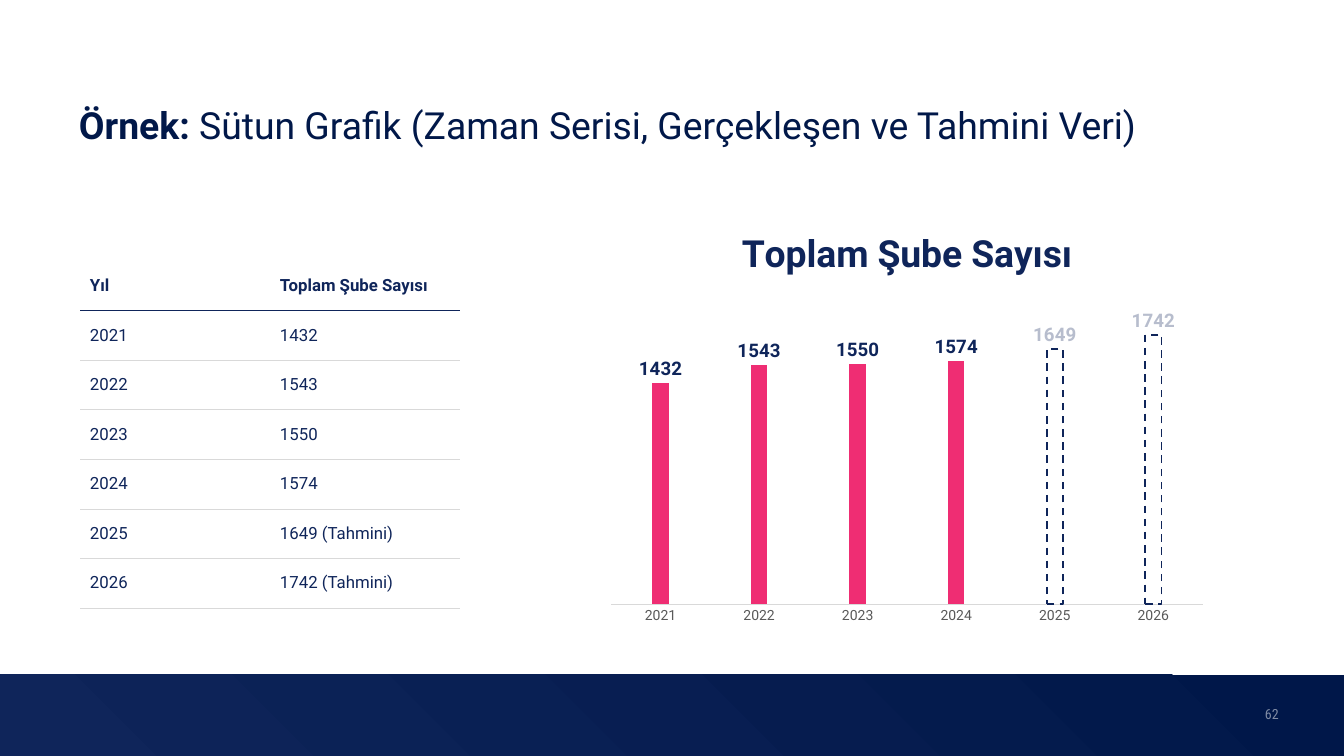
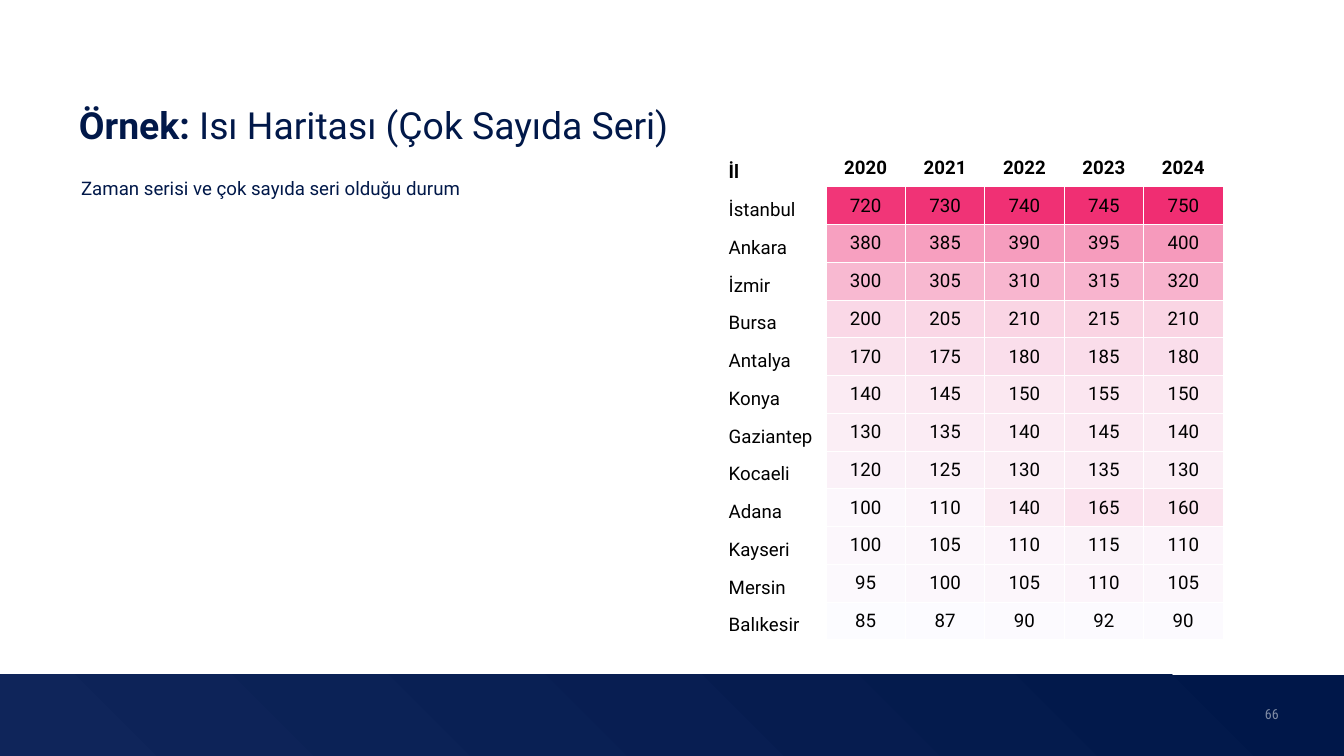
from dataclasses import dataclass

from lxml import etree
from pptx import Presentation
from pptx import util as u
from pptx.chart import data as chart_data
from pptx.dml.color import RGBColor
from pptx.enum import chart as charts, dml, shapes, text
from pptx.oxml import ns

PX = 914400 / 67.2
NO_STYLE = "{2D5ABB26-0587-4C30-8999-92F81FD0307C}"


@dataclass(frozen=True)
class Theme:
    font: str = "Roboto"
    narrow: str = "Roboto Condensed"
    title: str = "011849"
    navy: str = "0F255A"
    deep: str = "001749"
    pink: str = "EF2D73"
    rule: str = "D9D9D9"
    axis: str = "595959"
    forecast: str = "B7BDCD"
    black: str = "000000"
    white: str = "FFFFFF"
    heat_low: str = "FCFCFF"
    heat_high: str = "F02D72"
    title_size: int = 40
    body_size: int = 20
    table_size: int = 18
    small_size: int = 15


THEME = Theme()

BRANCHES = {2021: 1432, 2022: 1543, 2023: 1550, 2024: 1574, 2025: 1649, 2026: 1742}
FIRST_FORECAST = 2025
BRANCH_TITLE = "Toplam Şube Sayısı"

HEAT_YEARS = ["2020", "2021", "2022", "2023", "2024"]
CITIES = {
    "İstanbul": [720, 730, 740, 745, 750],
    "Ankara": [380, 385, 390, 395, 400],
    "İzmir": [300, 305, 310, 315, 320],
    "Bursa": [200, 205, 210, 215, 210],
    "Antalya": [170, 175, 180, 185, 180],
    "Konya": [140, 145, 150, 155, 150],
    "Gaziantep": [130, 135, 140, 145, 140],
    "Kocaeli": [120, 125, 130, 135, 130],
    "Adana": [100, 110, 140, 165, 160],
    "Kayseri": [100, 105, 110, 115, 110],
    "Mersin": [95, 100, 105, 110, 105],
    "Balıkesir": [85, 87, 90, 92, 90],
}


def px(value):
    return u.Emu(round(value * PX))


def box(*lengths):
    return [px(length) for length in lengths]


def color(value):
    return RGBColor.from_string(value)


def style_font(font, size, value, bold=False, name=THEME.font):
    font.name = name
    font.size = u.Pt(size)
    font.bold = bold
    font.color.rgb = color(value)


def add_xml(parent, tag, **attributes):
    return etree.SubElement(parent, ns.qn(tag), attributes)


# Text and the parts every slide shares
def add_text(slide, place, *parts):
    """Add a one-line box and return its paragraph."""
    frame = slide.shapes.add_textbox(*box(*place)).text_frame
    frame.word_wrap = True
    frame.vertical_anchor = text.MSO_ANCHOR.MIDDLE
    frame.margin_left = frame.margin_right = frame.margin_top = frame.margin_bottom = 0
    paragraph = frame.paragraphs[0]
    for part in parts:
        paragraph.add_run().text = part
    return paragraph


def add_footer_band(slide):
    band = slide.shapes.add_shape(shapes.MSO_SHAPE.RECTANGLE, *box(0, 675, 1344, 81))
    band.shadow.inherit = False
    band.line.fill.background()
    band.fill.gradient()
    for stop, position, value in zip(band.fill.gradient_stops, (0, 0.99), (THEME.navy, THEME.deep)):
        stop.position = position
        stop.color.rgb = color(value)
    # Circular gradient that starts in the lower left corner
    gradient = band.element.spPr.find(ns.qn("a:gradFill"))
    gradient.remove(gradient.find(ns.qn("a:lin")))
    circle = add_xml(gradient, "a:path", path="circle")
    add_xml(circle, "a:fillToRect", t="100000", r="100000")


def add_page_number(slide, number):
    paragraph = add_text(slide, (1265, 700, 63, 27), str(number))
    run = paragraph.runs[0]
    style_font(run.font, THEME.small_size, THEME.white, name=THEME.narrow)
    add_xml(next(run.font._element.iter(ns.qn("a:srgbClr"))), "a:alpha", val="50000")


def add_example_slide(presentation, topic, number):
    slide = presentation.slides.add_slide(presentation.slide_layouts[6])
    add_footer_band(slide)
    add_page_number(slide, number)
    paragraph = add_text(slide, (79, 83, 1187, 84), "Örnek: ", topic)
    for run, bold in zip(paragraph.runs, (True, False)):
        style_font(run.font, THEME.title_size, THEME.title, bold)
    return slide


# Tables
def add_plain_table(slide, place, rows):
    table = slide.shapes.add_table(len(rows), len(rows[0]), *box(*place)).table
    table.first_row = table.horz_banding = False
    table._tbl.tblPr.find(ns.qn("a:tableStyleId")).text = NO_STYLE
    height = px(place[3] / len(rows))
    for row in table.rows:
        row.height = height
    return table


def set_borders(cell, **borders):
    """Draw borders given as side=(colour, points), in the order L, R, T, B."""
    for side, (value, width) in borders.items():
        line = add_xml(cell._tc.get_or_add_tcPr(), f"a:ln{side}", w=str(u.Pt(width)))
        add_xml(add_xml(line, "a:solidFill"), "a:srgbClr", val=value)


def fill_cell(cell, value, size, font_color, bold, fill=None):
    cell.text = str(value)
    cell.vertical_anchor = text.MSO_ANCHOR.MIDDLE
    style_font(cell.text_frame.paragraphs[0].font, size, font_color, bold)
    if fill:
        cell.fill.solid()
        cell.fill.fore_color.rgb = color(fill)
    else:
        cell.fill.background()


def add_branch_table(slide):
    rows = [("Yıl", BRANCH_TITLE)]
    for year, count in BRANCHES.items():
        rows.append((year, f"{count} (Tahmini)" if year >= FIRST_FORECAST else count))
    table = add_plain_table(slide, (80, 261, 380, 347), rows)
    header_rule, row_rule = (THEME.navy, 2.25), (THEME.rule, 0.5)
    for i, row in enumerate(rows):
        for j, value in enumerate(row):
            cell = table.cell(i, j)
            if i == 0:
                set_borders(cell, B=header_rule)
            else:
                set_borders(cell, T=header_rule if i == 1 else row_rule, B=row_rule)
            fill_cell(cell, value, THEME.table_size, THEME.navy, bold=i == 0)
            cell.margin_left = cell.margin_right = cell.margin_top = cell.margin_bottom = px(10)


def heat_color(value, low, high):
    share = (value - low) / (high - low)
    pairs = zip(color(THEME.heat_low), color(THEME.heat_high))
    return str(RGBColor(*(round(start + (end - start) * share) for start, end in pairs)))


def add_heat_map(slide):
    rows = [["İl", *HEAT_YEARS]] + [[city, *counts] for city, counts in CITIES.items()]
    table = add_plain_table(slide, (722, 149, 501, 491), rows)
    for j, column in enumerate(table.columns):
        column.width = px(104 if j == 0 else 397 / len(HEAT_YEARS))
    counts = [count for city_counts in CITIES.values() for count in city_counts]
    low, high = min(counts), max(counts)
    for i, row in enumerate(rows):
        for j, value in enumerate(row):
            cell = table.cell(i, j)
            set_borders(cell, **dict.fromkeys("LRTB", (THEME.white, 1)))
            fill = heat_color(value, low, high) if i and j else None
            fill_cell(cell, value, THEME.body_size, THEME.black, i == 0, fill)
            if j:
                cell.text_frame.paragraphs[0].alignment = text.PP_ALIGN.CENTER
            else:
                cell.vertical_anchor = text.MSO_ANCHOR.BOTTOM


# Column chart
def place_plot(chart, **fractions):
    plot_area = chart._chartSpace.chart.plotArea
    for old in plot_area.findall(ns.qn("c:layout")):
        plot_area.remove(old)
    layout = etree.Element(ns.qn("c:layout"))
    plot_area.insert(0, layout)
    manual = add_xml(layout, "c:manualLayout")
    add_xml(manual, "c:layoutTarget", val="inner")
    for mode in ("xMode", "yMode"):
        add_xml(manual, f"c:{mode}", val="edge")
    for name, fraction in fractions.items():
        add_xml(manual, f"c:{name}", val=str(fraction))


def mark_forecast(point):
    point.format.fill.solid()
    point.format.fill.fore_color.rgb = color(THEME.white)
    line = point.format.line
    line.color.rgb = color(THEME.navy)
    line.width = u.Pt(2)
    line.dash_style = dml.MSO_LINE.DASH
    style_font(point.data_label.font, THEME.body_size, THEME.forecast, True)
    point.data_label.position = charts.XL_LABEL_POSITION.OUTSIDE_END


def add_branch_chart(slide):
    data = chart_data.CategoryChartData()
    data.categories = [str(year) for year in BRANCHES]
    data.add_series(BRANCH_TITLE, BRANCHES.values())
    chart = slide.shapes.add_chart(
        charts.XL_CHART_TYPE.COLUMN_CLUSTERED, *box(599, 210, 616, 424), data).chart
    style_font(chart.font, THEME.small_size, THEME.black)
    chart.has_legend = False
    chart.has_title = True
    title = chart.chart_title
    title.include_in_layout = False
    title.text_frame.text = BRANCH_TITLE
    style_font(title.text_frame.paragraphs[0].runs[0].font, THEME.title_size, THEME.navy, True)
    place_plot(chart, x=0.02, y=0.2, w=0.96, h=0.73)

    # Axes
    values = chart.value_axis
    values.minimum_scale, values.maximum_scale = 0, 2000
    values.has_major_gridlines = False
    values.visible = False
    years = chart.category_axis
    years.major_tick_mark = charts.XL_TICK_MARK.NONE
    years.format.line.color.rgb = color(THEME.rule)
    years.format.line.width = u.Pt(0.75)
    style_font(years.tick_labels.font, THEME.small_size, THEME.axis)

    # Columns and their labels
    plot = chart.plots[0]
    plot.gap_width, plot.overlap = 500, -27
    plot.vary_by_categories = False
    series = plot.series[0]
    series.format.fill.solid()
    series.format.fill.fore_color.rgb = color(THEME.pink)
    labels = series.data_labels
    labels.show_value = True
    labels.position = charts.XL_LABEL_POSITION.OUTSIDE_END
    style_font(labels.font, THEME.body_size, THEME.navy, True)
    for i, year in enumerate(BRANCHES):
        if year >= FIRST_FORECAST:
            mark_forecast(series.points[i])


def main():
    presentation = Presentation()
    presentation.slide_width, presentation.slide_height = box(1344, 756)

    # Column chart with actual and forecast years
    slide = add_example_slide(
        presentation, "Sütun Grafik (Zaman Serisi, Gerçekleşen ve Tahmini Veri)", 62)
    add_branch_table(slide)
    add_branch_chart(slide)

    # Heat map of cities and years
    slide = add_example_slide(presentation, "Isı Haritası (Çok Sayıda Seri)", 66)
    add_heat_map(slide)
    subtitle = add_text(
        slide, (81, 167, 501, 42), "Zaman serisi ve çok sayıda seri olduğu durum")
    style_font(subtitle.font, THEME.body_size, THEME.title)

    presentation.save("out.pptx")


if __name__ == "__main__":
    main()
